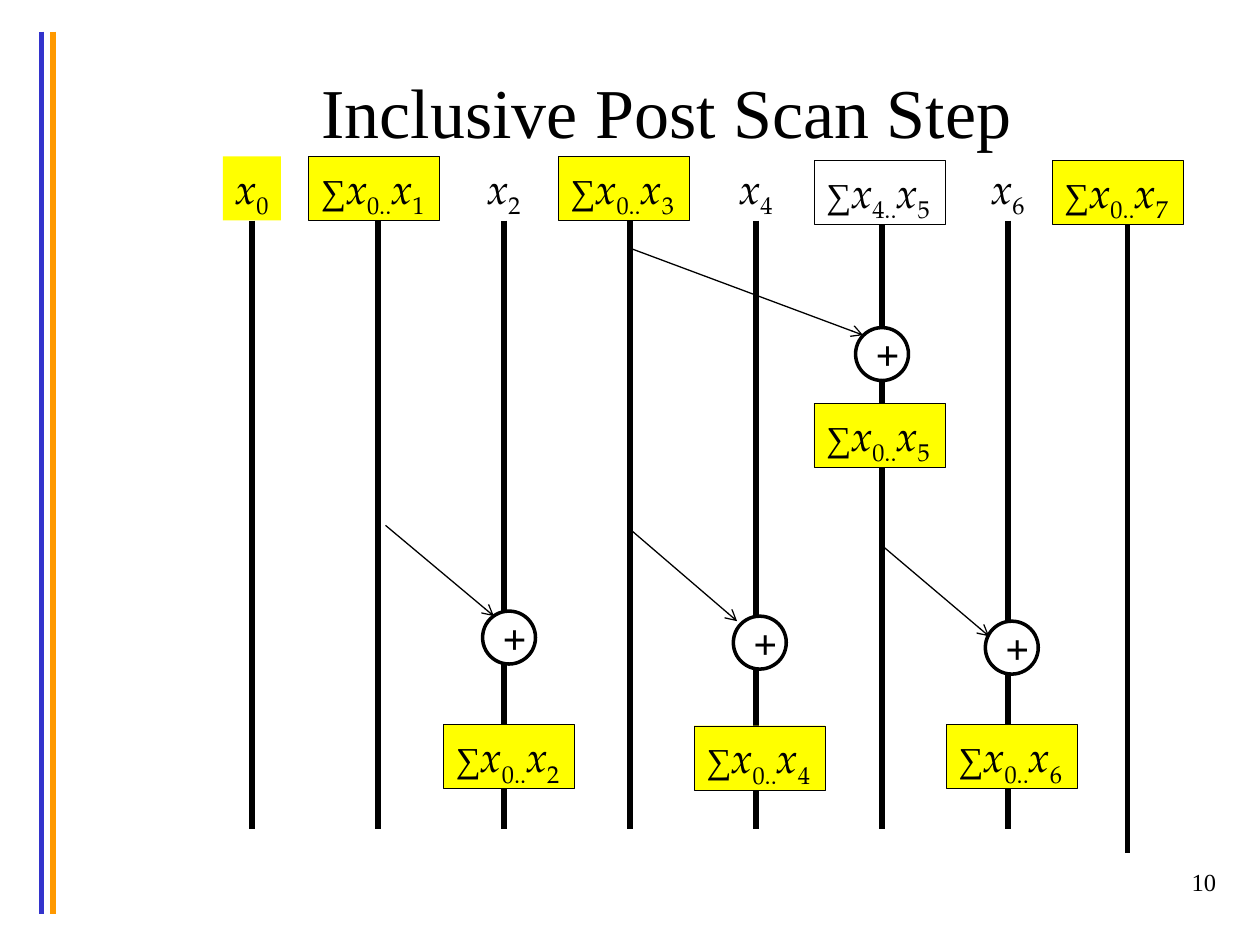
from dataclasses import dataclass

from lxml import etree
from pptx import Presentation
from pptx.dml.color import RGBColor
from pptx.enum.shapes import MSO_CONNECTOR, MSO_SHAPE
from pptx.enum.text import MSO_ANCHOR, MSO_AUTO_SIZE, PP_ALIGN
from pptx.oxml.ns import qn
from pptx.util import Inches, Pt

STRAIGHT = MSO_CONNECTOR.STRAIGHT
RECTANGLE, OVAL = MSO_SHAPE.RECTANGLE, MSO_SHAPE.OVAL
MIDDLE, FIT = MSO_ANCHOR.MIDDLE, MSO_AUTO_SIZE.SHAPE_TO_FIT_TEXT
CENTER, LEFT, RIGHT = PP_ALIGN.CENTER, PP_ALIGN.LEFT, PP_ALIGN.RIGHT
BOTTOM_SIDE = 2


@dataclass(frozen=True)
class Theme:
    ink: str = "000000"
    paper: str = "FFFFFF"
    done: str = "FFFF00"
    blue: str = "3333CC"
    orange: str = "FF9900"
    plain_font: str = "Times New Roman"
    math_font: str = "TeX Gyre Pagella"
    title_size: int = 40
    math_size: int = 24
    sum_size: int = 20
    number_size: int = 14


theme = Theme()
deck = Presentation()
deck.slide_width, deck.slide_height = Inches(10), Inches(7.5)
COLUMN = deck.slide_width / 10
ROW = deck.slide_height / 7.5
page = deck.slides.add_slide(deck.slide_layouts[5])


def add_line(start, end, color, weight, arrow=False):
    line = page.shapes.add_connector(
        STRAIGHT, int(start[0] * COLUMN), int(start[1] * ROW),
        int(end[0] * COLUMN), int(end[1] * ROW))
    line.line.color.rgb = RGBColor.from_string(color)
    line.line.width = Pt(weight)
    if arrow:
        etree.SubElement(line.line._get_or_add_ln(), qn("a:tailEnd"), type="arrow")
    etree.SubElement(line._element.spPr, qn("a:effectLst"))
    return line


def add_span(para, text, size, font=theme.plain_font, italic=False, bold=False, low=False):
    span = para.add_run()
    span.text = text
    span.font.size, span.font.name = Pt(size), font
    span.font.italic, span.font.bold = italic, bold
    span.font.color.rgb = RGBColor.from_string(theme.ink)
    if low:
        span.font._element.set("baseline", "-25000")


# Side rules
for x, color in ((0.33, theme.blue), (0.42, theme.orange)):
    add_line((x, 0.25), (x, 7.25), color, 3)

# Title
title = page.shapes.title
title.left, title.top = int(0.75 * COLUMN), int(0.25 * ROW)
title.width, title.height = int(9.08 * COLUMN), int(1.25 * ROW)
title.text_frame.vertical_anchor = MIDDLE
title_para = title.text_frame.paragraphs[0]
title_para.alignment = CENTER
add_span(title_para, "Inclusive Post Scan Step", theme.title_size)

# Page number
number = page.shapes.add_textbox(
    int(7.67 * COLUMN), int(6.83 * ROW), int(2.08 * COLUMN), int(0.5 * ROW))
number.text_frame.word_wrap = True
number_para = number.text_frame.paragraphs[0]
number_para.alignment = RIGHT
add_span(number_para, "10", theme.number_size)

# Values: centre, top, first index of the sum (None for one input), last index, fill
HEADERS = [
    (2, 1.24, None, 0, theme.done),
    (2.97, 1.24, 0, 1, theme.done),
    (4, 1.24, None, 2, None),
    (4.95, 1.24, 0, 3, theme.done),
    (6, 1.24, None, 4, None),
    (6.98, 1.27, 4, 5, theme.paper),
    (8, 1.24, None, 6, None),
    (8.87, 1.27, 0, 7, theme.done),
]
RESULTS = [
    (6.98, 3.2, 0, 5, theme.done),
    (4.04, 5.75, 0, 2, theme.done),
    (6.03, 5.76, 0, 4, theme.done),
    (8.03, 5.75, 0, 6, theme.done),
]
VALUE_HEIGHT = 0.51
LANES = [2, 3, 4, 5, 6, 7, 8, 8.95]

# Headers with the lane below each, then the results on top of the lanes
for index, (center, top, first, last, fill) in enumerate(HEADERS + RESULTS):
    is_sum = first is not None
    width = 1.04 if is_sum else 0.46
    box = page.shapes.add_shape(
        RECTANGLE, int((center - width / 2) * COLUMN), int(top * ROW),
        int(width * COLUMN), int(VALUE_HEIGHT * ROW))
    box.shadow.inherit = False
    if fill:
        box.fill.solid()
        box.fill.fore_color.rgb = RGBColor.from_string(fill)
    else:
        box.fill.background()
    if is_sum:
        box.line.color.rgb = RGBColor.from_string(theme.ink)
        box.line.width = Pt(0.25)
    else:
        box.line.fill.background()
    frame = box.text_frame
    frame.word_wrap, frame.auto_size = False, FIT
    frame.vertical_anchor = MSO_ANCHOR.TOP
    para = frame.paragraphs[0]
    para.alignment = LEFT
    if is_sum:
        add_span(para, "∑", theme.sum_size, italic=True)
        add_span(para, "x", theme.math_size, theme.math_font, italic=True)
        add_span(para, f"{first}..", theme.math_size, theme.math_font, low=True)
    add_span(para, "x", theme.math_size, theme.math_font, italic=True)
    add_span(para, str(last), theme.math_size, theme.math_font, low=True)

    if index < len(LANES):
        x = LANES[index]
        lane_end = 6.77 if index == len(LANES) - 1 else 6.58
        lane = add_line((x, top + VALUE_HEIGHT), (x, lane_end), theme.ink, 3)
        if center == x:
            lane.begin_connect(box, BOTTOM_SIDE)

# Additions: left and top of the circle, start and end of the arrow into it
ADDITIONS = [
    ((6.79, 2.6), (5, 1.97), (6.85, 2.66)),
    ((3.83, 4.85), (3.06, 4.17), (3.92, 4.89)),
    ((5.82, 4.89), (5, 4.2), (5.85, 4.93)),
    ((7.82, 4.93), (7, 4.33), (7.85, 5.05)),
]
for (left, top), start, end in ADDITIONS:
    circle = page.shapes.add_shape(
        OVAL, int(left * COLUMN), int(top * ROW), int(0.42 * COLUMN), int(0.42 * ROW))
    circle.shadow.inherit = False
    circle.fill.solid()
    circle.fill.fore_color.rgb = RGBColor.from_string(theme.paper)
    circle.line.color.rgb = RGBColor.from_string(theme.ink)
    circle.line.width = Pt(2)
    circle.text_frame.vertical_anchor = MIDDLE
    plus_para = circle.text_frame.paragraphs[0]
    plus_para.alignment = CENTER
    add_span(plus_para, "+", theme.math_size, bold=True)
    add_line(start, end, theme.ink, 0.75, arrow=True)

deck.save("out.pptx")
